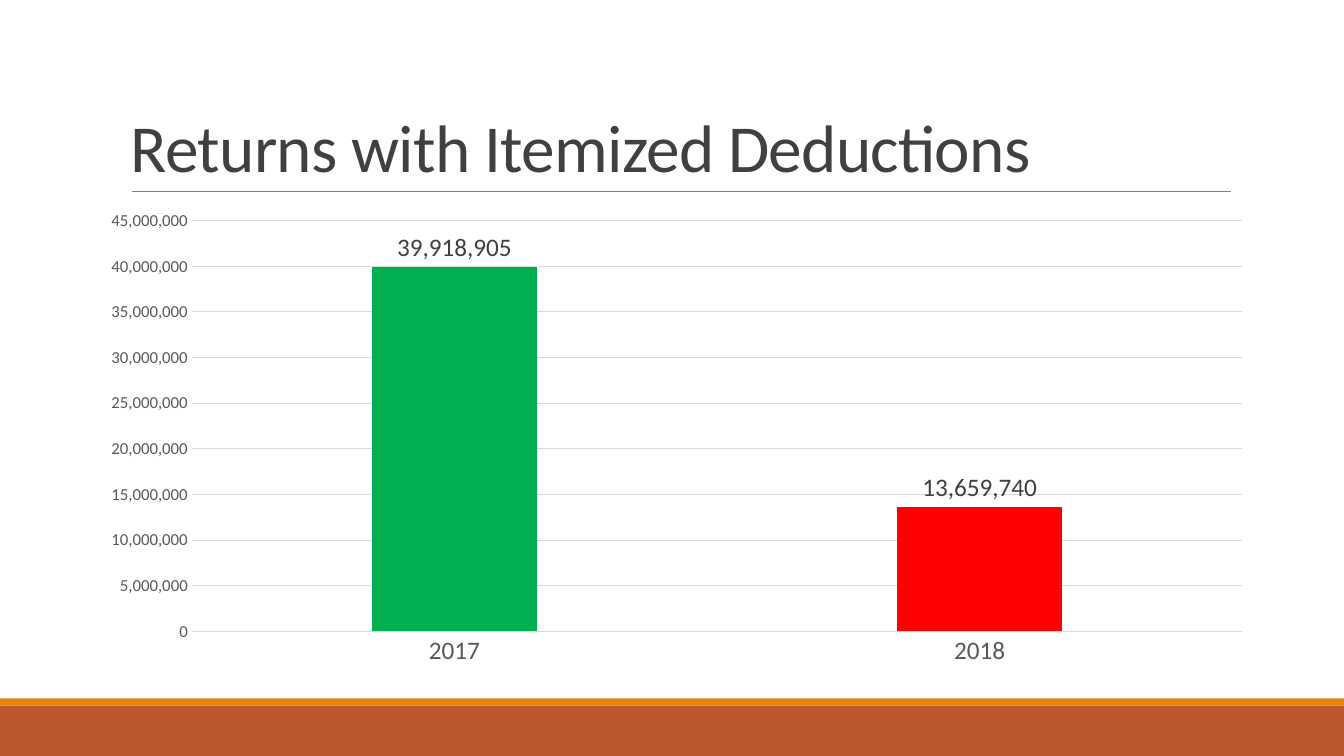
from lxml import etree
from pptx import Presentation
from pptx.chart.data import CategoryChartData
from pptx.dml.color import RGBColor
from pptx.enum.chart import XL_CHART_TYPE, XL_LABEL_POSITION, XL_TICK_MARK
from pptx.enum.shapes import MSO_CONNECTOR, MSO_SHAPE
from pptx.enum.text import MSO_ANCHOR
from pptx.oxml import parse_xml
from pptx.oxml.ns import nsdecls, qn
from pptx.util import Inches, Pt

COLUMNS = XL_CHART_TYPE.COLUMN_CLUSTERED
OUTSIDE_END = XL_LABEL_POSITION.OUTSIDE_END
NO_TICK = XL_TICK_MARK.NONE
STRAIGHT = MSO_CONNECTOR.STRAIGHT
RECTANGLE = MSO_SHAPE.RECTANGLE
BOTTOM = MSO_ANCHOR.BOTTOM

RUST = RGBColor(0xBD, 0x58, 0x2C)
ORANGE = RGBColor(0xE4, 0x83, 0x12)
GREEN = RGBColor(0x00, 0xB0, 0x50)
RED = RGBColor(0xFF, 0x00, 0x00)
DARK_GRAY = RGBColor(0x40, 0x40, 0x40)
AXIS_GRAY = RGBColor(0x59, 0x59, 0x59)
RULE_GRAY = RGBColor(0x80, 0x80, 0x80)
GRID_GRAY = RGBColor(0xD9, 0xD9, 0xD9)

WIDTH, HEIGHT = 13.33, 7.5
NUMBER_FORMAT = "#,##0"
RETURNS = {"2017": (39918905, GREEN), "2018": (13659740, RED)}


class SlideBuilder:
    font_name = "Calibri"

    def __init__(self, page):
        self.shapes = page.shapes

    def style_font(self, font, size, color):
        font.name = self.font_name
        font.size = Pt(size)
        font.color.rgb = color

    def style_line(self, line, width, color):
        line.width = Pt(width)
        line.color.rgb = color

    def band(self, top, height, color):
        """Add a filled strip across the whole slide."""
        strip = self.shapes.add_shape(
            RECTANGLE, 0, Inches(top), Inches(WIDTH), Inches(height))
        strip.shadow.inherit = False
        strip.fill.solid()
        strip.fill.fore_color.rgb = color
        strip.line.fill.background()

    def rule(self, left, right, top):
        """Add a thin horizontal line."""
        connector = self.shapes.add_connector(
            STRAIGHT, Inches(left), Inches(top), Inches(right), Inches(top))
        self.style_line(connector.line, 0.5, RULE_GRAY)
        etree.SubElement(connector._element.spPr, qn("a:effectLst"))

    def title(self, text, left, top, width, height):
        box = self.shapes.add_textbox(
            Inches(left), Inches(top), Inches(width), Inches(height))
        frame = box.text_frame
        frame.word_wrap = True
        frame.vertical_anchor = BOTTOM
        para = frame.paragraphs[0]
        para.line_spacing = 0.85
        self.style_font(para.font, 48, DARK_GRAY)
        span = para.add_run()
        span.text = text
        span.font._element.set("spc", "-50")

    def column_chart(self, columns, left, top, width, height):
        data = CategoryChartData(number_format=NUMBER_FORMAT)
        data.categories = list(columns)
        data.add_series("Series 1", [value for value, _ in columns.values()])
        chart = self.shapes.add_chart(
            COLUMNS, Inches(left), Inches(top), Inches(width), Inches(height), data).chart
        chart.has_legend = False
        chart.has_title = False
        chart.font.name = self.font_name
        chart.font.size = Pt(10)

        plot = chart.plots[0]
        plot.vary_by_categories = False
        plot.gap_width = 219
        plot.overlap = -27
        series = plot.series[0]
        series.format.fill.solid()
        series.format.fill.fore_color.rgb = RED
        for index, (_, color) in enumerate(columns.values()):
            fill = series.points[index].format.fill
            fill.solid()
            fill.fore_color.rgb = color

        labels = series.data_labels
        labels.show_value = True
        labels.position = OUTSIDE_END
        labels.number_format = NUMBER_FORMAT
        labels.number_format_is_linked = False
        self.style_font(labels.font, 18, DARK_GRAY)

        self.style_axes(chart.category_axis, chart.value_axis)
        self.place_plot(chart, x=0.075, y=0.02, w=0.906, h=0.857)

    def style_axes(self, category_axis, value_axis):
        for axis, size in ((category_axis, 18), (value_axis, 12)):
            axis.major_tick_mark = NO_TICK
            axis.minor_tick_mark = NO_TICK
            self.style_font(axis.tick_labels.font, size, AXIS_GRAY)
        self.style_line(category_axis.format.line, 0.75, GRID_GRAY)
        value_axis.format.line.fill.background()
        value_axis.minimum_scale = 0
        value_axis.maximum_scale = 45_000_000
        value_axis.major_unit = 5_000_000
        value_axis.tick_labels.number_format = NUMBER_FORMAT
        value_axis.tick_labels.number_format_is_linked = False
        self.style_line(value_axis.major_gridlines.format.line, 0.75, GRID_GRAY)

    def place_plot(self, chart, **fractions):
        """Fix the inner plot area as fractions of the chart frame."""
        modes = "".join(f'<c:{side}Mode val="edge"/>' for side in "xy")
        sizes = "".join(f'<c:{side} val="{part}"/>' for side, part in fractions.items())
        layout = parse_xml(
            f'<c:layout {nsdecls("c")}><c:manualLayout><c:layoutTarget val="inner"/>'
            f"{modes}{sizes}</c:manualLayout></c:layout>")
        plot_area = chart._chartSpace.chart.plotArea
        for automatic in plot_area.findall(qn("c:layout")):
            plot_area.remove(automatic)
        plot_area.insert(0, layout)


def main():
    deck = Presentation()
    deck.slide_width = Inches(WIDTH)
    deck.slide_height = Inches(HEIGHT)
    builder = SlideBuilder(deck.slides.add_slide(deck.slide_layouts[6]))

    builder.band(7, 0.5, RUST)
    builder.band(6.93, 0.07, ORANGE)
    builder.rule(1.31, 12.21, 1.9)
    builder.title("Returns with Itemized Deductions", 1.2, 0.31, 11, 1.59)
    builder.column_chart(RETURNS, 1.04, 2.09, 11.5, 4.76)

    deck.save("out.pptx")


if __name__ == "__main__":
    main()
